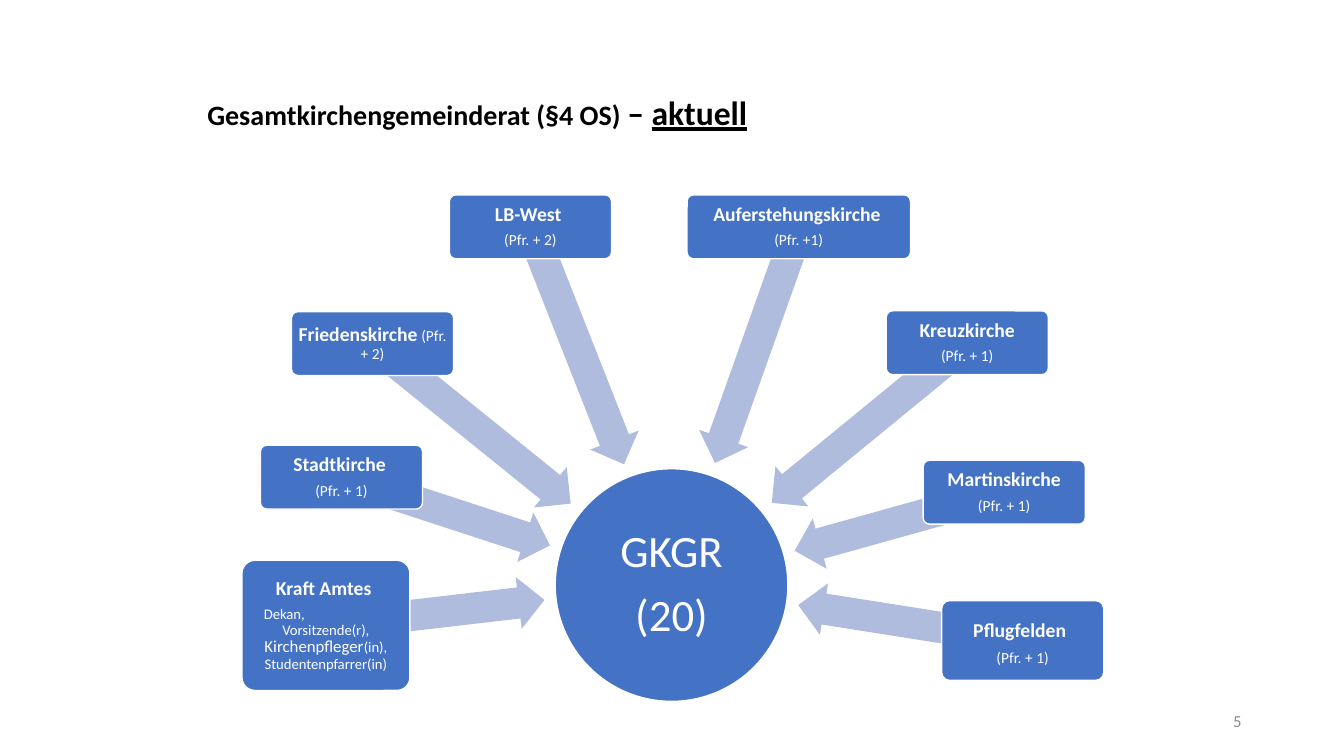
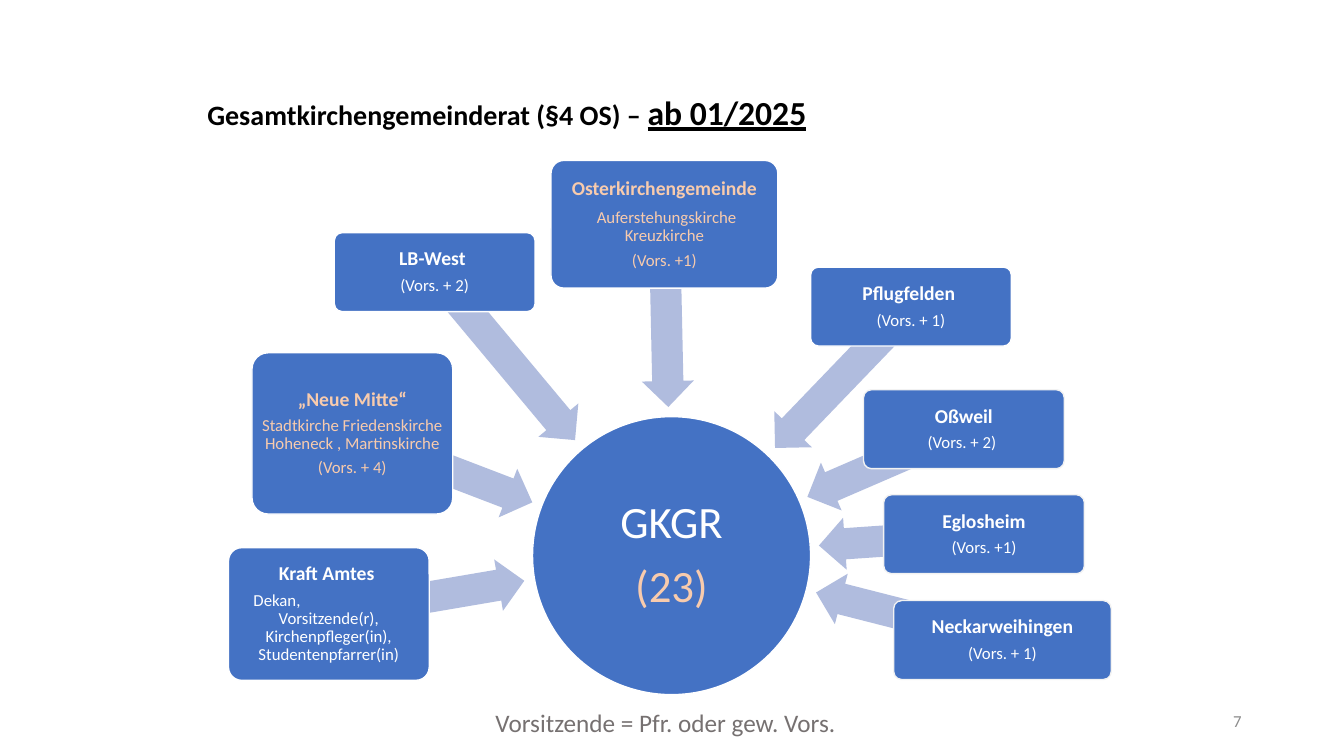
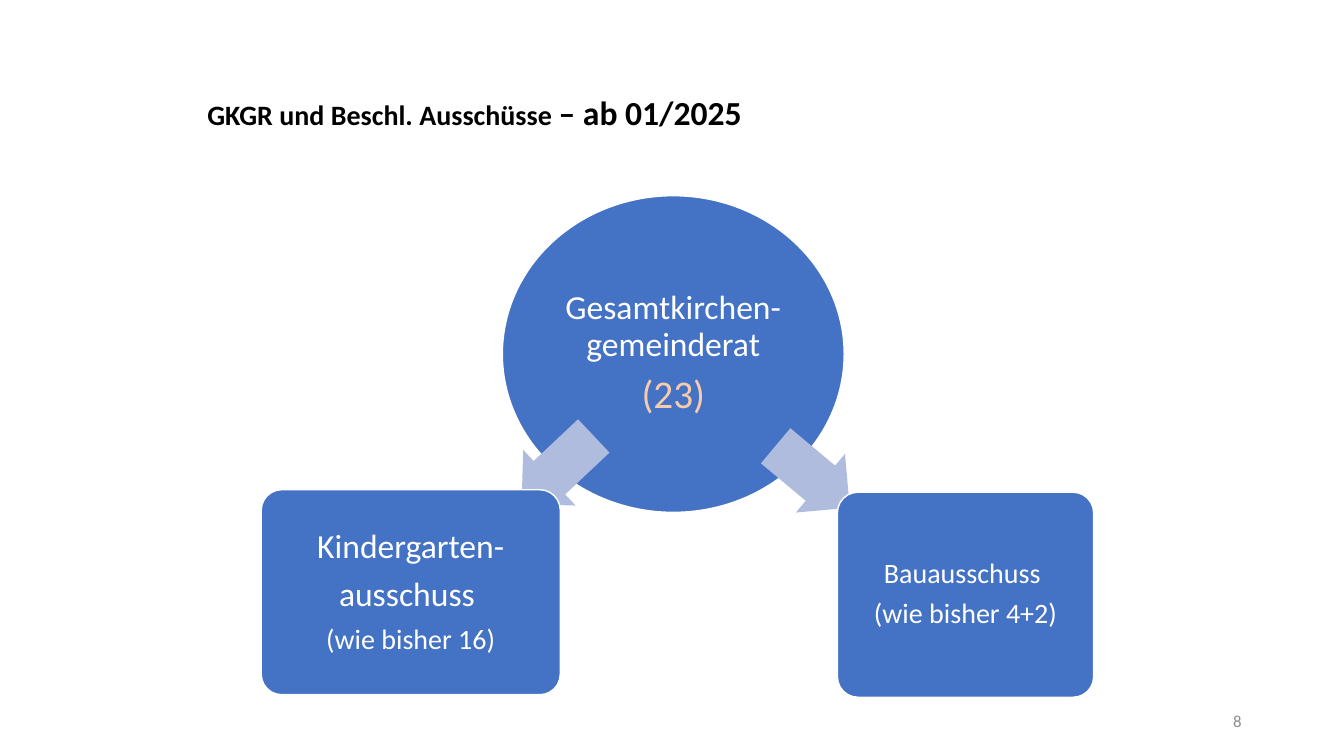
"""Builds three slides on the make-up of a joint parish council."""
from math import atan2, degrees, hypot

from pptx import Presentation
from pptx.dml.color import RGBColor
from pptx.enum.shapes import MSO_SHAPE
from pptx.enum.text import MSO_ANCHOR, PP_ALIGN
from pptx.util import Inches, Pt

BLUE = RGBColor(0x44, 0x72, 0xC4)
PALE_BLUE = RGBColor(0xB0, 0xBC, 0xDE)
WHITE = RGBColor(0xFF, 0xFF, 0xFF)
OFF_WHITE = RGBColor(0xF2, 0xF2, 0xF2)
PEACH = RGBColor(0xF8, 0xCB, 0xAD)
BLACK = RGBColor(0x00, 0x00, 0x00)
GREY = RGBColor(0x8C, 0x8C, 0x8C)
DARK_GREY = RGBColor(0x76, 0x71, 0x71)

CELL = Inches(1) / 12
COLUMNS, ROWS = 160, 90
TITLE_AREA = (23.5, 10.9, 108, 6.7)
NUMBER_AREA = (113, 83.4, 36, 4.8)
NOTE_AREA = (57.8, 83.6, 47.8, 4.8)
ARROW_HEIGHT = 6.2
ARROW_SHARE = 0.95

TITLE = {"size": Pt(20), "bold": True}
TITLE_LARGE = {"size": Pt(24), "bold": True}
TITLE_LINE = {"size": Pt(24), "bold": True, "underline": True}
NAME = {"size": Pt(14), "bold": True}
SMALL = {"size": Pt(10.5)}
SEATS = {"size": Pt(11)}
BODY = {"size": Pt(12)}
NOTE = {"size": Pt(18)}
SPACER = {"size": Pt(19)}
MEDIUM = {"size": Pt(20)}
LARGE = {"size": Pt(24)}
TOTAL = {"size": Pt(28)}
HUB = {"size": Pt(32)}

presentation = Presentation()
presentation.slide_width = int(COLUMNS * CELL)
presentation.slide_height = int(ROWS * CELL)


def write(shape, paragraphs, colour, alignment, spacing=0.9, after=0, **frame_format):
    frame = shape.text_frame
    for attribute, value in {"word_wrap": True, **frame_format}.items():
        setattr(frame, attribute, value)
    for index, runs in enumerate(paragraphs):
        paragraph = frame.add_paragraph() if index else frame.paragraphs[0]
        paragraph.alignment = alignment
        paragraph.line_spacing = spacing
        paragraph.space_after = int(after * runs[0][1]["size"])
        for text, style, *accent in runs:
            run = paragraph.add_run()
            run.text = text
            for attribute, value in {"name": "Calibri", "bold": False, **style}.items():
                setattr(run.font, attribute, value)
            run.font.color.rgb = accent[0] if accent else colour


def draw(slide, preset, area, fill, outline=None, paragraphs=(), inset=0.03):
    shape = slide.shapes.add_shape(preset, *[int(length * CELL) for length in area])
    shape.shadow.inherit = False
    shape.fill.solid()
    shape.fill.fore_color.rgb = fill
    if outline is None:
        shape.line.fill.background()
    else:
        shape.line.color.rgb = outline
        shape.line.width = Pt(1)
    if preset == MSO_SHAPE.ROUNDED_RECTANGLE:
        shape.adjustments[0] = 0.1
    if preset == MSO_SHAPE.LEFT_ARROW:
        shape.adjustments[0], shape.adjustments[1] = 0.6, 0.5
    margins = {f"margin_{side}": Inches(inset) for side in ("left", "top", "right", "bottom")}
    write(shape, paragraphs, WHITE, PP_ALIGN.CENTER, after=0.35,
          vertical_anchor=MSO_ANCHOR.MIDDLE, **margins)
    return shape


current_boxes = [
    ((28.8, 66.7, 20, 15.5), WHITE, [
        [("Kraft Amtes ", NAME)], [("Dekan,", SMALL)],
        [("Vorsitzende(r), ", SMALL), ("Kirchenpfleger", BODY),
         ("(in), Studentenpfarrer(in)", SMALL)]]),
    ((31, 53, 19.3, 7.6), WHITE, [
        [("Stadtkirche", NAME), (" ", SEATS)], [("(Pfr. + 1)", SEATS)]]),
    ((34.7, 37.1, 19.3, 7.6), WHITE, [
        [("Friedenskirche", NAME), (" (Pfr. + 2)", SEATS)]]),
    ((53.5, 23.2, 19.3, 7.6), WHITE, [
        [("LB-West ", NAME)], [("(Pfr. + 2)", SEATS)]]),
    ((81.8, 23.2, 26.6, 7.6), WHITE, [
        [("Auferstehungskirche", NAME), (" ", SEATS)], [("(Pfr. +1)", SEATS)]]),
    ((105.5, 37, 19.3, 7.6), WHITE, [
        [("Kreuzkirche", NAME)], [("(Pfr. + 1)", SEATS)]]),
    ((109.9, 54.8, 19.3, 7.6), WHITE, [
        [("Martinskirche", NAME)], [("(Pfr. + 1)", SEATS)]]),
    ((112.1, 71.5, 19.3, 9.5), WHITE, [
        [("Pflugfelden", NAME), (" ", SPACER)], [("(Pfr. + 1)", SEATS)]]),
]
future_boxes = [
    ((27.2, 65.2, 23.9, 15.8), WHITE, [
        [("Kraft Amtes ", NAME)], [("Dekan,", BODY)],
        [("Vorsitzende(r), Kirchenpfleger(in), Studentenpfarrer(in)", BODY)]]),
    ((30, 42, 23.9, 19.2), WHITE, [
        [("„Neue Mitte“", NAME, PEACH)],
        [("Stadtkirche Friedenskirche Hoheneck , Martinskirche", BODY, PEACH)],
        [("(Vors. + 4)", BODY, PEACH)]]),
    ((39.8, 27.7, 23.9, 9.4), WHITE, [
        [("LB-West ", NAME)], [("(Vors. + 2)", BODY)]]),
    ((65.6, 19.1, 27, 15.2), WHITE, [
        [("Osterkirchengemeinde", NAME, PEACH)],
        [(" ", LARGE | {"size": Pt(14)}), ("Auferstehungskirche Kreuzkirche", BODY, PEACH)],
        [("(Vors. +1)", BODY, PEACH)]]),
    ((96.5, 31.8, 23.9, 9.4), WHITE, [
        [("Pflugfelden ", NAME)], [("(Vors. + 1)", BODY)]]),
    ((102.8, 46.4, 23.9, 9.4), OFF_WHITE, [
        [("Oßweil", NAME)], [("(Vors. + 2) ", BODY)]]),
    ((105.2, 58.9, 23.9, 9.4), OFF_WHITE, [
        [("Eglosheim", NAME)], [("(Vors. +1)", BODY)]]),
    ((106.4, 71.5, 25.9, 9.4), OFF_WHITE, [
        [("Neckarweihingen", NAME)], [("(Vors. + 1)", BODY)]]),
]
committee_boxes = [
    ((31.1, 58.3, 35.6, 24.4), WHITE, [
        [("Kindergarten-", LARGE)], [("ausschuss ", LARGE)], [("(wie bisher 16)", MEDIUM)]]),
    ((99.7, 58.6, 30.5, 24.4), WHITE, [
        [("Bauausschuss ", MEDIUM)], [("(wie bisher 4+2)", MEDIUM)]]),
]
committee_arrows = [((60.5, 51.4, 11.8, 9.1), 316.7), ((91, 52.2, 11.5, 9.1), 219.9)]

council_title = "Gesamtkirchengemeinderat (§4 OS) "
slides = [
    ("5", [(council_title, TITLE), ("– ", TITLE_LARGE), ("aktuell", TITLE_LINE)],
     (66.1, 55.8, 27.7, 27.7), [[("GKGR", HUB)], [("(20)", HUB)]],
     current_boxes, None, 0.15),
    ("7", [(council_title + "– ", TITLE), ("ab 01/2025", TITLE_LINE)],
     (63.4, 49.6, 33.1, 33.1), [[("GKGR", HUB)], [("(23)", HUB, PEACH)]],
     future_boxes, None, 0.18),
    ("8", [("GKGR und Beschl. Ausschüsse ", TITLE), ("– ab 01/2025", TITLE_LARGE)],
     (59.8, 23.3, 40.7, 37.7),
     [[("Gesamtkirchen- gemeinderat", LARGE)], [("(23)", TOTAL, PEACH)]],
     committee_boxes, committee_arrows, None),
]

for number, title, hub_area, hub_text, boxes, arrows, dean_indent in slides:
    slide = presentation.slides.add_slide(presentation.slide_layouts[6])
    draw(slide, MSO_SHAPE.OVAL, hub_area, BLUE, WHITE, hub_text, inset=0.02)

    if arrows is None:
        hub_left, hub_top, hub_size, _ = hub_area
        arrows = []
        for (left, top, width, height), _, _ in boxes:
            tail_x, tail_y = left + width / 2, top + height / 2
            across = tail_x - hub_left - hub_size / 2
            down = tail_y - hub_top - hub_size / 2
            distance = hypot(across, down)
            length = ARROW_SHARE * (distance - hub_size / 2)
            middle_x = tail_x - across / distance * length / 2
            middle_y = tail_y - down / distance * length / 2
            area = (middle_x - length / 2, middle_y - ARROW_HEIGHT / 2, length, ARROW_HEIGHT)
            arrows.append((area, degrees(atan2(down, across)) % 360))

    drawn_boxes = []
    for (arrow_area, angle), (box_area, outline, text) in zip(arrows, boxes):
        arrow = draw(slide, MSO_SHAPE.LEFT_ARROW, arrow_area, PALE_BLUE)
        arrow.rotation = angle
        drawn_boxes.append(
            draw(slide, MSO_SHAPE.ROUNDED_RECTANGLE, box_area, BLUE, outline, text))

    if dean_indent:
        dean = drawn_boxes[0].text_frame.paragraphs[1]
        dean.alignment = PP_ALIGN.LEFT
        dean.space_after = Pt(0)
        dean._p.get_or_add_pPr().set("marL", str(Inches(dean_indent)))

    captions = [
        (NUMBER_AREA, [(number, BODY)], GREY, PP_ALIGN.RIGHT, 1.0, MSO_ANCHOR.MIDDLE),
        (TITLE_AREA, title, BLACK, PP_ALIGN.LEFT, 0.9, MSO_ANCHOR.TOP),
    ]
    if boxes is future_boxes:
        captions.append((NOTE_AREA, [("Vorsitzende = Pfr. oder gew. Vors.", NOTE)],
                         DARK_GREY, PP_ALIGN.LEFT, 1.0, MSO_ANCHOR.TOP))
    for area, runs, colour, alignment, spacing, anchor in captions:
        caption = slide.shapes.add_textbox(*[int(length * CELL) for length in area])
        write(caption, [runs], colour, alignment, spacing, vertical_anchor=anchor)

presentation.save("out.pptx")
